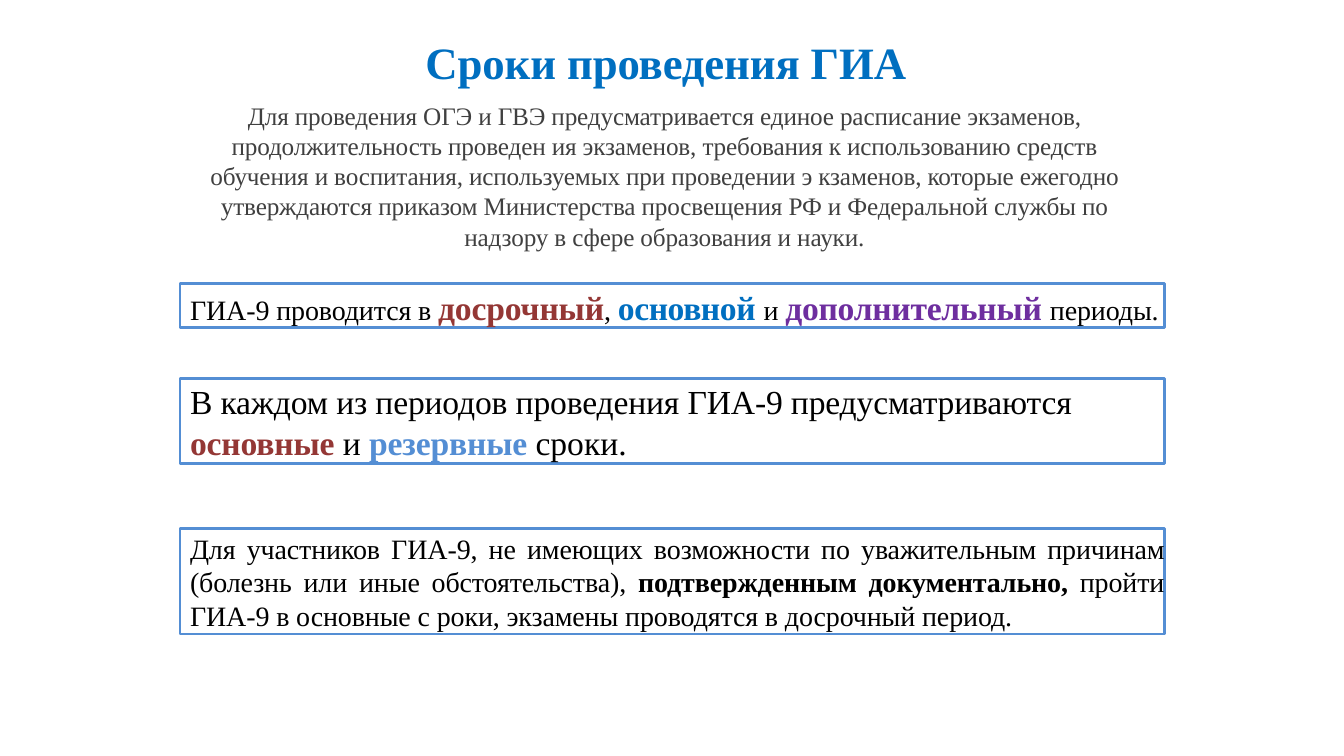
import pptx
import pptx.dml.color
import pptx.enum.shapes
import pptx.enum.text
import pptx.util

Cm = pptx.util.Cm
Pt = pptx.util.Pt
ALIGN = pptx.enum.text.PP_ALIGN
BLACK, GRAY, BLUE, LIGHT_BLUE = "000000", "404040", "006FC0", "548ED4"
RED, PURPLE = "943735", "6E2E9F"


def color(value):
    """Turn a hex string into a colour."""
    return pptx.dml.color.RGBColor.from_string(value)


def styled(text, size=20, fill=BLACK, bold=False, spacing=-0.1):
    """Describe a piece of text and its format."""
    return {"text": text, "size": size, "fill": fill, "bold": bold, "spacing": spacing}


class ExamSlide:
    """Hold the style and the slide being built."""

    font_name = "Times New Roman"
    border_width = 1.92

    def __init__(self, presentation):
        """Add a slide that has only a title placeholder."""
        self.slide = presentation.slides.add_slide(presentation.slide_layouts[5])

    def fill_text(self, shape, paragraphs, align, before, left=0, top=0.03):
        """Fill a shape with paragraphs of styled pieces."""
        frame = shape.text_frame
        frame.word_wrap = True
        frame.auto_size = pptx.enum.text.MSO_AUTO_SIZE.NONE
        frame.vertical_anchor = pptx.enum.text.MSO_ANCHOR.TOP
        frame.margin_left, frame.margin_top = Cm(left), Cm(top)
        frame.margin_right = frame.margin_bottom = 0
        for index, pieces in enumerate(paragraphs):
            paragraph = frame.add_paragraph() if index else frame.paragraphs[0]
            paragraph.alignment = align
            paragraph.space_before = Pt(0 if index else before)
            for piece in pieces:
                run = paragraph.add_run()
                run.text = piece["text"]
                run.font.name = self.font_name
                run.font.size = Pt(piece["size"])
                run.font.bold = piece["bold"]
                run.font.color.rgb = color(piece["fill"])
                run._r.get_or_add_rPr().set("spc", str(round(piece["spacing"] * 100)))

    def title(self, piece, left, top, width, height):
        """Place and fill the title."""
        shape = self.slide.shapes.title
        shape.left, shape.top, shape.width, shape.height = map(Cm, (left, top, width, height))
        self.fill_text(shape, [[piece]], ALIGN.LEFT, 0.9)

    def text(self, paragraphs, left, top, width, height):
        """Add centred text without a border."""
        shape = self.slide.shapes.add_textbox(*map(Cm, (left, top, width, height)))
        self.fill_text(shape, paragraphs, ALIGN.CENTER, 1)

    def framed(self, paragraphs, top, height, before, align=ALIGN.LEFT):
        """Add text in a blue border."""
        rectangle = pptx.enum.shapes.MSO_SHAPE.RECTANGLE
        shape = self.slide.shapes.add_shape(rectangle, *map(Cm, (4.54, top, 24.8, height)))
        shape.shadow.inherit = False
        shape.fill.background()
        shape.line.color.rgb = color(LIGHT_BLUE)
        shape.line.width = Pt(self.border_width)
        self.fill_text(shape, paragraphs, align, before, left=0.25, top=0.08)


def main():
    """Build and save the slide."""
    presentation = pptx.Presentation()
    presentation.slide_width, presentation.slide_height = Cm(33.87), Cm(19.05)
    page = ExamSlide(presentation)

    page.title(styled("Сроки проведения ГИА", size=32, fill=BLUE, bold=True),
               10.72, 0.84, 12.4, 1.42)

    introduction = [
        "Для проведения ОГЭ и ГВЭ предусматривается единое расписание экзаменов, "
        "продолжительность проведен ия экзаменов, требования к использованию средств",
        "обучения и воспитания, используемых при проведении э кзаменов, которые ежегодно "
        "утверждаются приказом Министерства просвещения РФ и Федеральной службы по "
        "надзору в сфере образования и науки.",
    ]
    page.text([[styled(text, size=18, fill=GRAY)] for text in introduction],
              5.11, 2.49, 23.27, 3.89)

    page.framed([[
        styled("ГИА-9 проводится в "),
        styled("досрочный", size=24, fill=RED, bold=True),
        styled(", "),
        styled("основной ", size=24, fill=BLUE, bold=True, spacing=-0.3),
        styled("и "),
        styled("дополнительный ", size=24, fill=PURPLE, bold=True, spacing=-0.2),
        styled("периоды."),
    ]], 7.14, 1.12, 1.9)

    page.framed([
        [styled("В каждом из периодов проведения ГИА-9 предусматриваются", size=24)],
        [styled("основные ", size=24, fill=RED, bold=True),
         styled("и ", size=24, spacing=0),
         styled("резервные ", size=24, fill=LIGHT_BLUE, bold=True),
         styled("сроки.", size=24, spacing=0)],
    ], 9.53, 2.16, 2.1)

    page.framed([[
        styled("Для участников ГИА-9, не имеющих возможности по уважительным причинам "
               "(болезнь или иные обстоятельства), "),
        styled("подтвержденным документально, ", bold=True),
        styled("пройти ГИА-9 в основные с роки, экзамены проводятся в досрочный период."),
    ]], 13.31, 2.67, 2.5, align=ALIGN.JUSTIFY)

    presentation.save("out.pptx")


if __name__ == "__main__":
    main()
